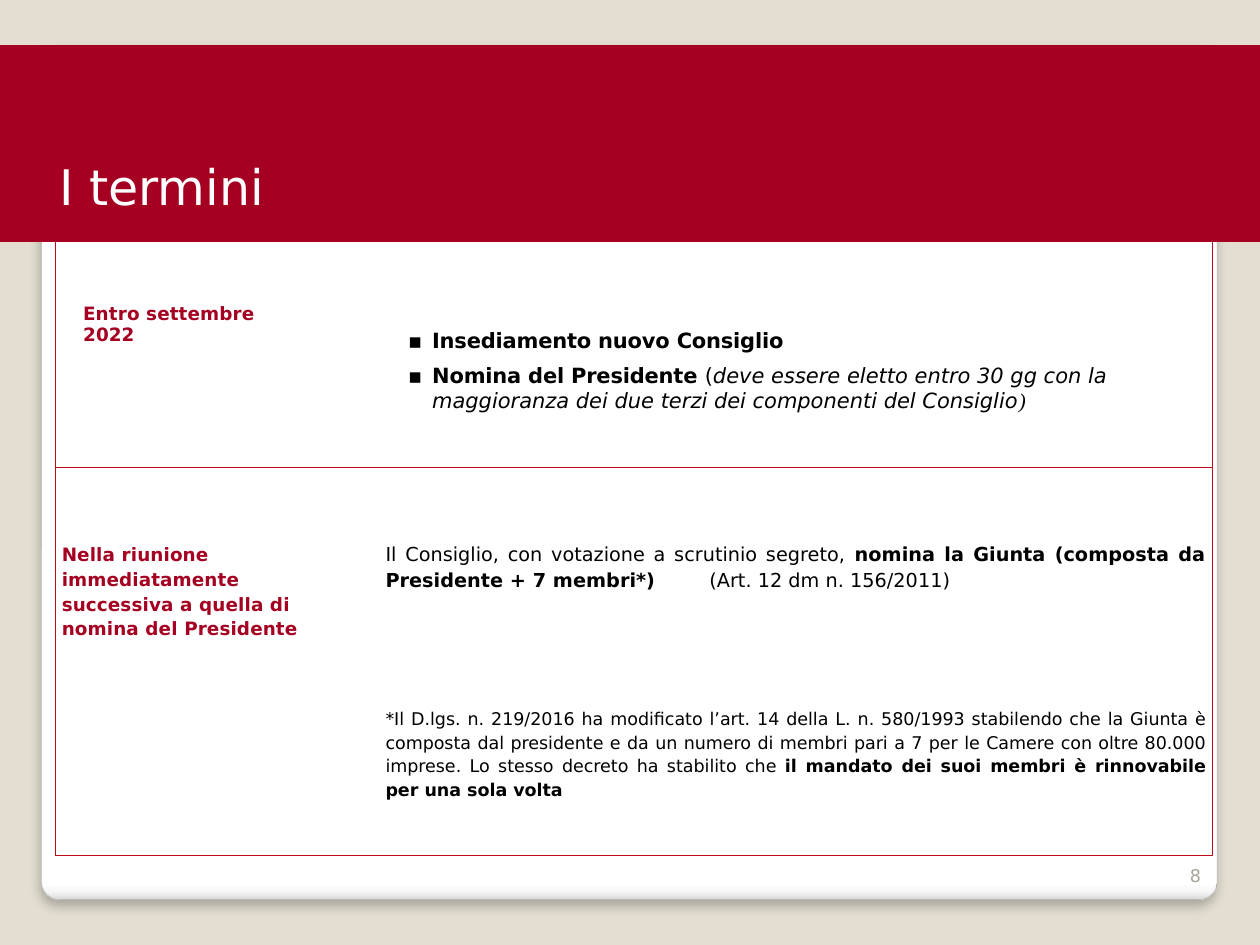
from lxml.etree import SubElement
from pptx import Presentation
from pptx.dml.color import RGBColor
from pptx.enum.shapes import MSO_SHAPE
from pptx.enum.text import MSO_ANCHOR, PP_ALIGN
from pptx.oxml import parse_xml
from pptx.oxml.ns import nsdecls, qn
from pptx.util import Emu, Inches, Pt

COLORS = {"background": "E3DED1", "crimson": "A50021", "border": "BC0B1F", "white": "FFFFFF",
          "black": "000000", "outline": "A4A4A4", "number": "A8A49B"}
CARD_STOPS = ((0, "FFFFFF"), (98, "FFFFFF"), (99, "F7F7F7"), (100, "DADADA"))
SIDES = {"L": "left", "R": "right", "T": "top", "B": "bottom"}


def rgb(name):
    return RGBColor.from_string(COLORS[name])


class SlideBuilder:
    """Holds the style and the current slide; lengths are shares of the slide."""

    font = "DejaVu Sans"

    def __init__(self, deck):
        self.deck = deck
        self.page = deck.slides.add_slide(deck.slide_layouts[5])
        self.page.background.fill.solid()
        self.page.background.fill.fore_color.rgb = rgb("background")

    def frame(self, left, top, width, height):
        wide, high = self.deck.slide_width, self.deck.slide_height
        return [Emu(round(value)) for value in (left * wide, top * high, width * wide, height * high)]

    def shape(self, kind, frame, line, line_width):
        box = self.page.shapes.add_shape(kind, *self.frame(*frame))
        box.shadow.inherit = False
        box.line.color.rgb = rgb(line)
        box.line.width = Pt(line_width)
        return box

    def card(self, frame):
        box = self.shape(MSO_SHAPE.ROUNDED_RECTANGLE, frame, "outline", 0.16)
        box.adjustments[0] = 0.021
        box.fill.gradient()
        box.fill.gradient_angle = 270
        stops = box._element.spPr.find(".//" + qn("a:gsLst"))
        for stop in list(stops):
            stops.remove(stop)
        for share, color in CARD_STOPS:
            stop = SubElement(stops, qn("a:gs"), pos=str(share * 1000))
            SubElement(stop, qn("a:srgbClr"), val=color)
        effects = box._element.spPr.find(qn("a:effectLst"))
        effects.append(parse_xml(
            f'<a:outerShdw {nsdecls("a")} blurRad="{Pt(6)}" dist="{Pt(4)}" dir="5400000" '
            f'rotWithShape="0"><a:srgbClr val="{COLORS["black"]}"><a:alpha val="25000"/>'
            '</a:srgbClr></a:outerShdw>'))

    def band(self, frame):
        box = self.shape(MSO_SHAPE.RECTANGLE, frame, "crimson", 0.75)
        box.fill.solid()
        box.fill.fore_color.rgb = rgb("crimson")

    def title(self, text, frame):
        box = self.page.shapes.title
        box.left, box.top, box.width, box.height = self.frame(*frame)
        box.text_frame.vertical_anchor = MSO_ANCHOR.TOP
        para = box.text_frame.paragraphs[0]
        para.alignment = PP_ALIGN.LEFT
        self.span(para, text, 28, "white")
        self.page.shapes._spTree.append(box._element)  # in front of the band

    def label(self, text, frame, size, color):
        box = self.page.shapes.add_textbox(*self.frame(*frame))
        box.text_frame.word_wrap = True
        box.text_frame.vertical_anchor = MSO_ANCHOR.BOTTOM
        para = box.text_frame.paragraphs[0]
        para.alignment = PP_ALIGN.RIGHT
        self.span(para, text, size, color)

    def span(self, para, text, size, color="black", bold=False, italic=False, font=None, spacing=0):
        span = para.add_run()
        span.text = text
        span.font.name = font or self.font
        span.font.size = Pt(size)
        span.font.bold, span.font.italic = bold, italic
        span.font.color.rgb = rgb(color)
        if spacing:
            span._r.get_or_add_rPr().set("spc", str(round(spacing * 100)))

    def table(self, frame, widths, heights):
        table = self.page.shapes.add_table(len(heights), len(widths), *self.frame(*frame)).table
        table.first_row = table.horz_banding = False
        for column, width in zip(table.columns, widths):
            column.width = Inches(width)
        for row, height in zip(table.rows, heights):
            row.height = Inches(height)
        last_row, last_column = len(heights) - 1, len(widths) - 1
        for y in range(len(heights)):
            for x in range(len(widths)):
                sides = "T" + "L" * (x == 0) + "R" * (x == last_column) + "B" * (y == last_row)
                self.borders(table.cell(y, x), sides)
        return table

    def borders(self, cell, drawn):
        properties = cell._tc.get_or_add_tcPr()
        for side in SIDES:
            line = SubElement(properties, qn(f"a:ln{side}"), w=str(Pt(0.75)))
            if side in drawn:
                fill = SubElement(line, qn("a:solidFill"))
                SubElement(fill, qn("a:srgbClr"), val=COLORS["border"])
            else:
                SubElement(line, qn("a:noFill"))
        cell.fill.background()

    def margins(self, cell, **inches):
        for side in SIDES.values():
            setattr(cell, f"margin_{side}", Inches(inches[side]))

    def paragraph(self, cell, spans, first=True, align=PP_ALIGN.LEFT, line=None, after=0,
                  bullet=None, tab=None):
        para = cell.text_frame.paragraphs[0] if first else cell.text_frame.add_paragraph()
        para.alignment = align
        para.line_spacing = line
        para.space_after = Pt(after)
        properties = para._p.get_or_add_pPr()
        if bullet:
            properties.set("marL", str(Inches(0.27)))
            properties.set("indent", str(Inches(-0.19)))
            SubElement(properties, qn("a:buFont"), typeface=self.font)
            SubElement(properties, qn("a:buChar"), char=bullet)
        if tab:
            stops = SubElement(properties, qn("a:tabLst"))
            SubElement(stops, qn("a:tab"), pos=str(Inches(tab)), algn="l")
        for text, style in spans:
            self.span(para, text, **style)


def main():
    deck = Presentation()
    deck.slide_width, deck.slide_height = Inches(10), Inches(7.5)
    builder = SlideBuilder(deck)

    # Card and page number
    builder.card((0.033, 0.048, 0.933, 0.904))
    builder.label("8", (0.913, 0.89, 0.05, 0.054), 10, "number")

    # Table of deadlines
    table = builder.table((0.044, 0.256, 0.918, 0.65), (2.19, 0.38, 6.61), (1.79, 3.08))
    deadline = dict(size=10.5, color="crimson", bold=True, spacing=0.1)

    # First deadline
    when, what = table.cell(0, 0), table.cell(0, 2)
    builder.margins(when, left=0.22, right=0.15, top=0.49, bottom=0.15)
    builder.paragraph(when, [("Entro settembre 2022", deadline)], line=Pt(12.2))
    builder.margins(what, left=0.15, right=0.15, top=0.69, bottom=0.15)
    strong = dict(size=12, bold=True, spacing=-0.1)
    builder.paragraph(what, [("Insediamento nuovo Consiglio", strong)], after=6, bullet="▪")
    builder.paragraph(what, [
        ("Nomina del Presidente ", strong),
        ("(", dict(size=12, spacing=-0.1)),
        ("deve essere eletto entro 30 gg con la maggioranza dei due terzi dei componenti del Consiglio",
         dict(size=12, italic=True)),
        (")", dict(size=12, italic=True, font="Times New Roman")),
    ], first=False, bullet="▪")

    # Second deadline
    when, what = table.cell(1, 0), table.cell(1, 2)
    builder.margins(when, left=0.05, right=0.05, top=0.59, bottom=0)
    builder.paragraph(when, [
        ("Nella riunione immediatamente successiva a quella di nomina del Presidente", deadline),
    ], line=1.15)
    builder.margins(what, left=0.05, right=0.05, top=0.58, bottom=0)
    justified = dict(align=PP_ALIGN.JUSTIFY, line=1.15)
    builder.paragraph(what, [
        ("Il Consiglio, con votazione a scrutinio segreto, ", dict(size=11)),
        ("nomina la Giunta (composta da Presidente + 7 membri*)", dict(size=11, bold=True)),
        ("\t(Art. 12 dm n. 156/2011)", dict(size=11)),
    ], after=65.5, tab=2.57, **justified)
    builder.paragraph(what, [
        ("*Il D.lgs. n. 219/2016 ha modificato l’art. 14 della L. n. 580/1993 stabilendo che la Giunta "
         "è composta dal presidente e da un numero di membri pari a 7 per le Camere con oltre 80.000 "
         "imprese. Lo stesso decreto ha stabilito che ", dict(size=10)),
        ("il mandato dei suoi membri è rinnovabile per una sola volta", dict(size=10, bold=True)),
    ], first=False, after=6, **justified)

    # Title on its band
    builder.band((0, 0.048, 1, 0.207))
    builder.title("I termini", (0.037, 0.159, 0.925, 0.076))

    deck.save("out.pptx")


if __name__ == "__main__":
    main()
